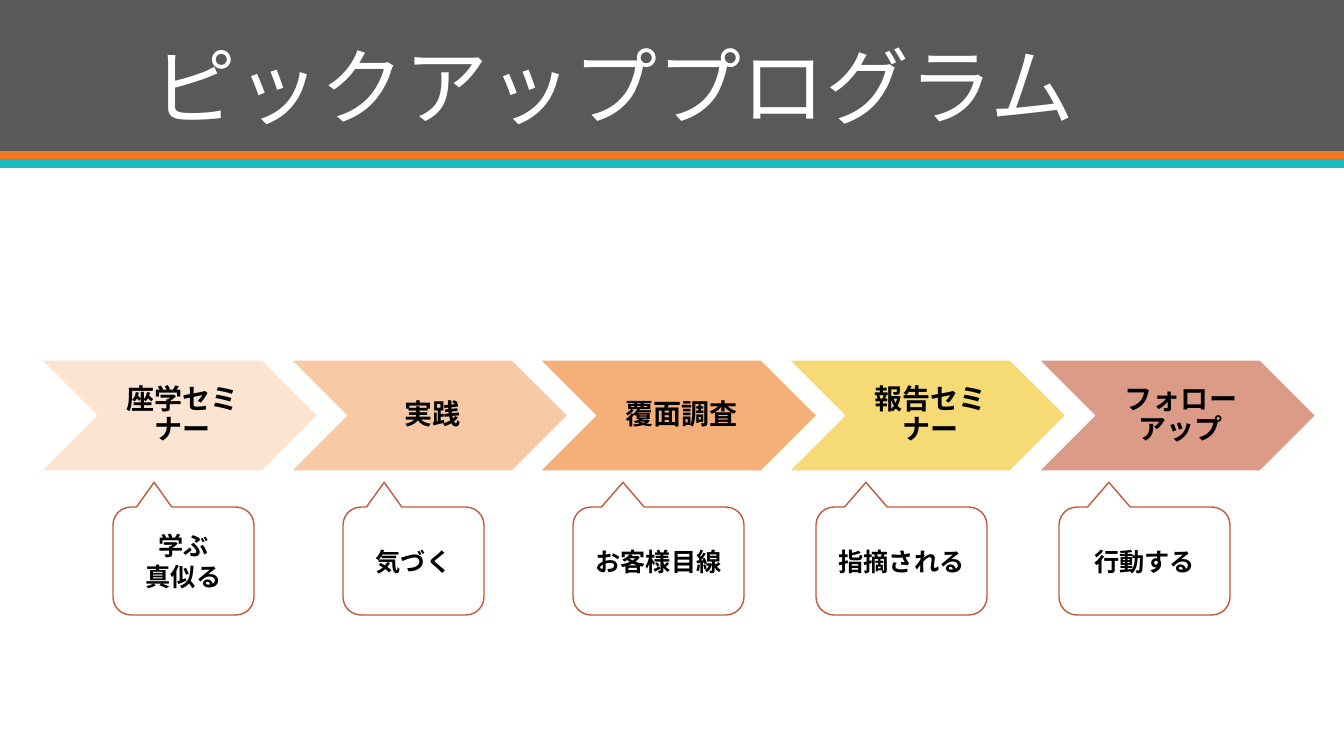
import pptx
import pptx.dml.color
import pptx.enum.lang
import pptx.enum.shapes
import pptx.enum.text
import pptx.oxml
import pptx.oxml.ns
import pptx.util

EMU_PER_PX = 914400 / 100.8
FONT = "Noto Sans CJK JP"
SHAPES = pptx.enum.shapes.MSO_SHAPE
ALIGN = pptx.enum.text.PP_ALIGN
ANCHOR = pptx.enum.text.MSO_ANCHOR


def px(length):
    return pptx.util.Emu(round(length * EMU_PER_PX))


def color(value):
    return pptx.dml.color.RGBColor.from_string(value)


def write_text(frame, text, size, ink="000000", bold=True, align=ALIGN.CENTER,
               anchor=ANCHOR.MIDDLE, spacing=1.0, insets=(10, 5, 10, 5)):
    frame.word_wrap = True
    frame.vertical_anchor = anchor
    (frame.margin_left, frame.margin_top,
     frame.margin_right, frame.margin_bottom) = map(px, insets)
    for index, line in enumerate(text.split("\n")):
        para = frame.add_paragraph() if index else frame.paragraphs[0]
        para.alignment = align
        para.line_spacing = spacing
        span = para.add_run()
        span.text = line
        span.font.name = FONT
        span.font.size = pptx.util.Pt(size)
        span.font.bold = bold
        span.font.color.rgb = color(ink)
        span.font.language_id = pptx.enum.lang.MSO_LANGUAGE_ID.JAPANESE
        # East Asian glyphs take their font from a:ea
        east_asian = pptx.oxml.parse_xml(
            f'<a:ea {pptx.oxml.ns.nsdecls("a")} typeface="{FONT}"/>')
        span.font._element.find(pptx.oxml.ns.qn("a:latin")).addnext(east_asian)


class ProgramSlide:
    def __init__(self, deck):
        self.page = deck.slides.add_slide(deck.slide_layouts[6])
        self.chevron_line = "FFFFFF"
        self.callout_line = "C05A3A"

    def shape(self, kind, left, top, width, height, fill, line=None):
        box = self.page.shapes.add_shape(
            kind, px(left), px(top), px(width), px(height))
        box.shadow.inherit = False
        box.fill.solid()
        box.fill.fore_color.rgb = color(fill)
        if line:
            box.line.color.rgb = color(line)
            box.line.width = pptx.util.Pt(1)
        else:
            box.line.fill.background()
        return box

    def label(self, text, left, top, width, height, size, **style):
        box = self.page.shapes.add_textbox(
            px(left), px(top), px(width), px(height))
        write_text(box.text_frame, text, size, **style)

    def band(self, top, height, fill):
        self.shape(SHAPES.RECTANGLE, 0, top, 1344, height, fill)

    def step(self, text, left, fill):
        top, width, height, point = 360, 277, 111, 55
        self.shape(SHAPES.CHEVRON, left, top, width, height, fill,
                   self.chevron_line)
        self.label(text, left + point, top, width - 2 * point, height, 20,
                   spacing=0.9, insets=(9, 3, 3, 3))

    def callout(self, text, left, width):
        box = self.shape(SHAPES.ROUNDED_RECTANGULAR_CALLOUT, left, 507, width,
                         108, "FFFFFF", self.callout_line)
        for index, value in enumerate((-0.208, -0.729, 0.167)):
            box.adjustments[index] = value
        write_text(box.text_frame, text, 18)


def main():
    deck = pptx.Presentation()
    deck.slide_width, deck.slide_height = px(1344), px(756)
    slide = ProgramSlide(deck)

    # Header bands and title
    for top, height, fill in ((0, 151, "595959"), (151, 9, "EF7920"),
                              (159, 9, "1EB8C1")):
        slide.band(top, height, fill)
    slide.label("ピックアッププログラム", 143, 28, 1058, 114, 60, ink="FFFFFF",
                bold=False, align=ALIGN.LEFT, anchor=ANCHOR.BOTTOM, spacing=0.9)

    # Program steps
    steps = (("座学セミナー", "FCE4D2"), ("実践", "F9C9A6"),
             ("覆面調査", "F5AF79"), ("報告セミナー", "F5DA75"),
             ("フォローアップ", "DB9B87"))
    for index, (text, fill) in enumerate(steps):
        slide.step(text, 41 + round(249.5 * index), fill)

    # What each step brings
    for text, left, width in (("学ぶ\n真似る", 113, 141), ("気づく", 343, 141),
                              ("お客様目線", 573, 171), ("指摘される", 816, 171),
                              ("行動する", 1059, 171)):
        slide.callout(text, left, width)

    deck.save("out.pptx")


if __name__ == "__main__":
    main()
